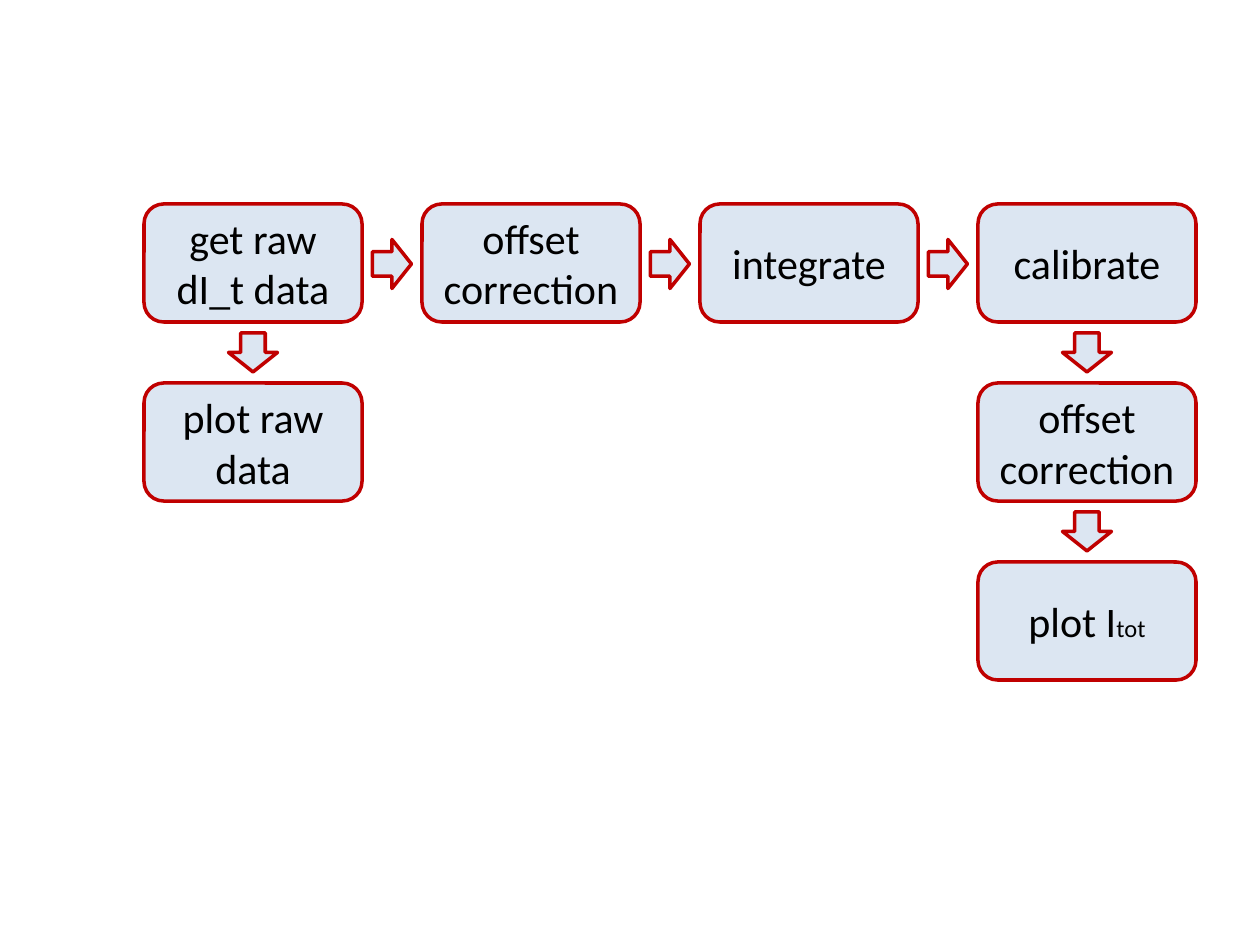
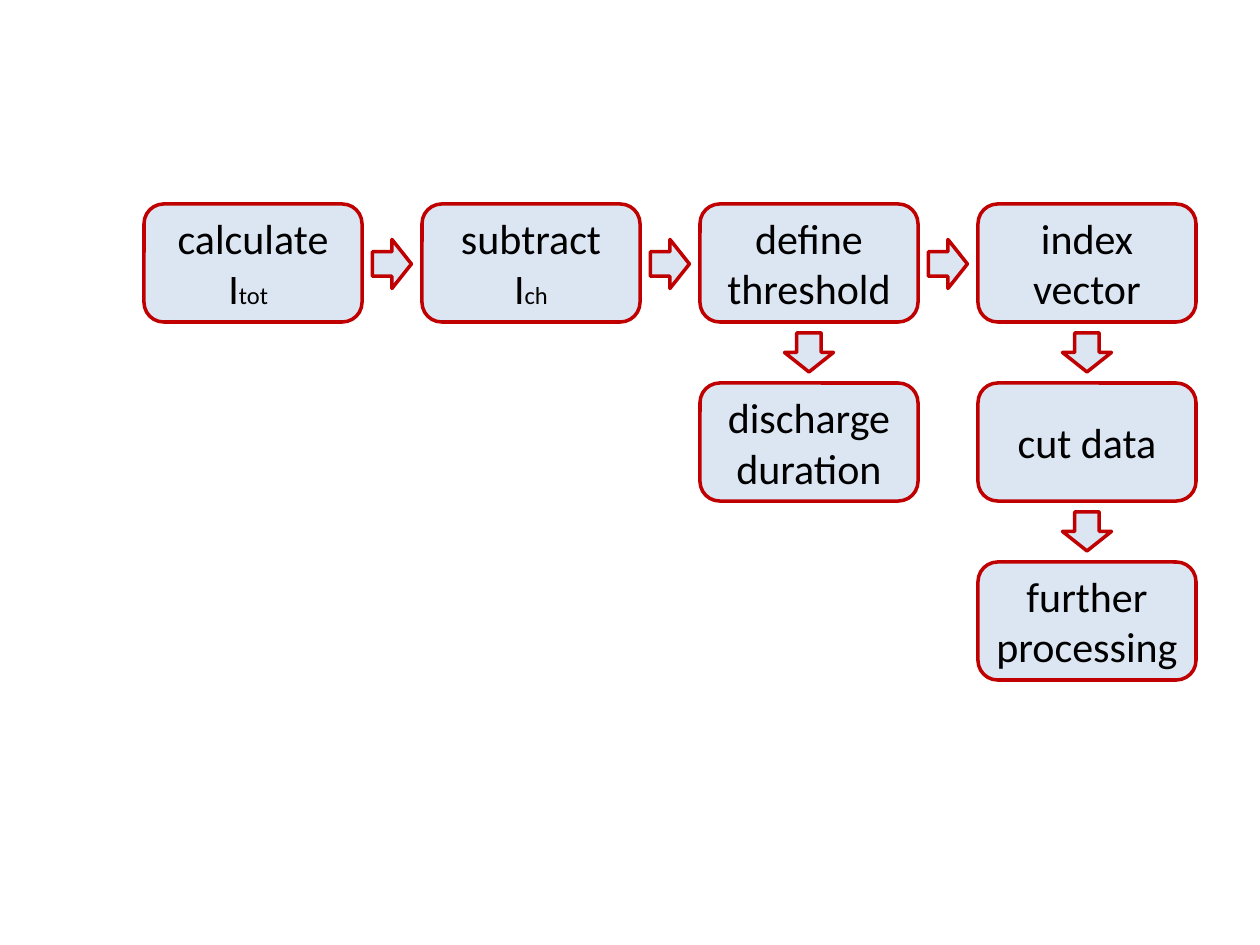
import pptx
import pptx.dml.color
import pptx.enum.shapes
import pptx.enum.text
import pptx.util

PX = 914400 / 126
COLORS = {"fill": "DCE6F2", "line": "C00000", "text": "000000"}
FONT = "Calibri"
LEFT, TOP = 144, 204
BOX_W, BOX_H = 218, 118
PITCH_X, PITCH_Y = 278, 179
ARROW_W, ARROW_H = 39, 49
SHAPES = pptx.enum.shapes.MSO_SHAPE

FLOWS = [
    {
        "boxes": {
            (0, 0): ["get raw dI_t data"],
            (1, 0): ["offset correction"],
            (2, 0): ["integrate"],
            (3, 0): ["calibrate"],
            (0, 1): ["plot raw data"],
            (3, 1): ["offset correction"],
            (3, 2): ["plot I", "tot"],
        },
    },
    {
        "boxes": {
            (0, 0): ["calculate I", "tot", " "],
            (1, 0): ["subtract I", "ch"],
            (2, 0): ["define threshold"],
            (3, 0): ["index vector"],
            (2, 1): ["discharge duration"],
            (3, 1): ["cut data"],
            (3, 2): ["further processing"],
        },
    },
]


def px(n):
    """Convert pixels to EMU."""
    return round(n * PX)


def rgb(name):
    """Look up a named colour."""
    return pptx.dml.color.RGBColor.from_string(COLORS[name])


def add_shape(s, kind, x, y, w, h):
    """Add a preset shape in the shared fill and outline."""
    sp = s.shapes.add_shape(kind, px(x), px(y), px(w), px(h))
    sp.shadow.inherit = False
    sp.fill.solid()
    sp.fill.fore_color.rgb = rgb("fill")
    sp.line.color.rgb = rgb("line")
    sp.line.width = pptx.util.Pt(2)
    return sp


def add_step(s, x, y, parts):
    """Add a step box whose second text part is set small."""
    sp = add_shape(s, SHAPES.ROUNDED_RECTANGLE, x, y, BOX_W, BOX_H)
    tf = sp.text_frame
    tf.word_wrap = True
    tf.vertical_anchor = pptx.enum.text.MSO_ANCHOR.MIDDLE
    p = tf.paragraphs[0]
    p.alignment = pptx.enum.text.PP_ALIGN.CENTER
    p.font.name = FONT
    p.font.size = pptx.util.Pt(24)
    p.font.color.rgb = rgb("text")
    for i, part in enumerate(parts):
        r = p.add_run()
        r.text = part
        if i == 1:
            r.font.size = pptx.util.Pt(14)


def add_arrow(s, cx, cy, rotation=0):
    """Add a block arrow centred on a point."""
    sp = add_shape(s, SHAPES.RIGHT_ARROW, cx - ARROW_W / 2, cy - ARROW_H / 2,
                   ARROW_W, ARROW_H)
    sp.rotation = rotation


def add_flow(prs, boxes):
    """Add a slide of steps on a grid, with an arrow into each later step."""
    s = prs.slides.add_slide(prs.slide_layouts[6])
    for (col, row), parts in boxes.items():
        x, y = LEFT + col * PITCH_X, TOP + row * PITCH_Y
        add_step(s, x, y, parts)
        if row:
            add_arrow(s, x + BOX_W / 2, y - (PITCH_Y - BOX_H) / 2, 90)
        elif col:
            add_arrow(s, x - (PITCH_X - BOX_W) / 2, y + BOX_H / 2 + 1)


def main():
    """Build and save the presentation."""
    prs = pptx.Presentation()
    prs.slide_width, prs.slide_height = px(1260), px(945)
    for flow in FLOWS:
        add_flow(prs, flow["boxes"])
    prs.save("out.pptx")


if __name__ == "__main__":
    main()
